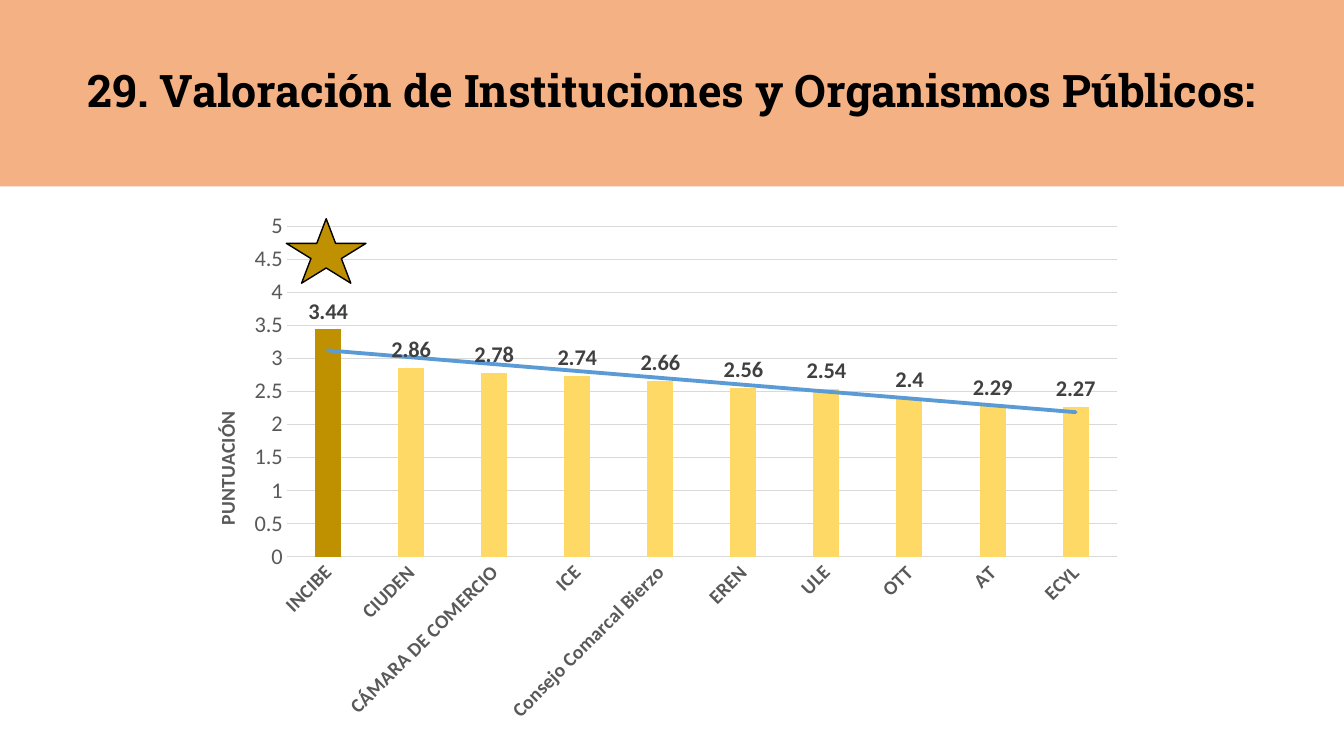
from pptx import Presentation
from pptx.chart.data import CategoryChartData
from pptx.dml.color import RGBColor
from pptx.enum.chart import XL_CHART_TYPE as ChartType, XL_LABEL_POSITION as LabelPos
from pptx.enum.chart import XL_TICK_MARK as TickMark
from pptx.enum.shapes import MSO_SHAPE as Preset
from pptx.enum.text import MSO_ANCHOR as Anchor, MSO_AUTO_SIZE as AutoSize, PP_ALIGN as Align
from pptx.oxml import parse_xml
from pptx.oxml.ns import nsdecls, qn
from pptx.util import Inches, Pt

ORANGE = RGBColor(0xF4, 0xB1, 0x83)
YELLOW = RGBColor(0xFF, 0xD9, 0x66)
GOLD = RGBColor(0xBF, 0x90, 0x00)
BLACK = RGBColor(0, 0, 0)
DARK_GREY = RGBColor(0x40, 0x40, 0x40)
GREY = RGBColor(0x59, 0x59, 0x59)
LIGHT_GREY = RGBColor(0xD9, 0xD9, 0xD9)

SCORES = {
    "INCIBE": 3.44, "CIUDEN": 2.86, "CÁMARA DE COMERCIO": 2.78, "ICE": 2.74,
    "Consejo Comarcal Bierzo": 2.66, "EREN": 2.56, "ULE": 2.54,
    "OTT": 2.4, "AT": 2.29, "ECYL": 2.27,
}


def style_font(font, size, color, bold=False, name="Calibri"):
    font.name, font.size, font.bold = name, Pt(size), bold
    font.color.rgb = color


def place(parent, index, target, **fractions):
    """Give a chart part a manual layout in fractions of the chart."""
    old = parent.find(qn("c:layout"))
    if old is not None:
        parent.remove(old)
    inner = f'<c:layoutTarget val="{target}"/>' if target else ""
    modes = '<c:xMode val="edge"/><c:yMode val="edge"/>'
    sizes = "".join(f'<c:{key} val="{value}"/>' for key, value in fractions.items())
    parent.insert(index, parse_xml(
        f'<c:layout {nsdecls("c")}><c:manualLayout>{inner}{modes}{sizes}'
        "</c:manualLayout></c:layout>"))


prs = Presentation()
prs.slide_width, prs.slide_height = Inches(13.33), Inches(7.5)
slide = prs.slides.add_slide(prs.slide_layouts[5])

# Title band
title = slide.shapes.title
title.left, title.top, title.width, title.height = 0, 0, Inches(13.33), Inches(1.85)
title.fill.solid()
title.fill.fore_color.rgb = ORANGE
frame = title.text_frame
frame.auto_size = AutoSize.NONE
frame.word_wrap = True
frame.vertical_anchor = Anchor.MIDDLE
heading = frame.paragraphs[0]
heading.alignment = Align.CENTER
heading.line_spacing = 0.9
run = heading.add_run()
run.text = "29. Valoración de Instituciones y Organismos Públicos:"
style_font(run.font, 32, BLACK, True, "Roboto Slab")

# Score chart
data = CategoryChartData()
data.categories = list(SCORES)
data.add_series("Series 1", list(SCORES.values()))
chart = slide.shapes.add_chart(
    ChartType.COLUMN_CLUSTERED, Inches(1.8), Inches(1.98), Inches(9.47), Inches(5.29), data).chart
chart.has_legend = False
chart.has_title = False
style_font(chart.font, 10, BLACK)
plot = chart.plots[0]
plot.gap_width, plot.overlap, plot.vary_by_categories = 219, -27, False

# Columns, with the winner in gold
scores = plot.series[0]
for part, color in ((scores, YELLOW), (scores.points[0], GOLD)):
    part.format.fill.solid()
    part.format.fill.fore_color.rgb = color
labels = scores.data_labels
labels.show_value = True
labels.position = LabelPos.OUTSIDE_END
style_font(labels.font, 16, DARK_GREY, True)

# Linear trend line
scores._element.find(qn("c:cat")).addprevious(parse_xml(
    f'<c:trendline {nsdecls("c", "a")}><c:spPr><a:ln w="{Pt(2.75)}" cap="rnd"><a:solidFill>'
    '<a:srgbClr val="5B9BD5"/></a:solidFill></a:ln></c:spPr><c:trendlineType val="linear"/>'
    '<c:dispRSqr val="0"/><c:dispEq val="0"/></c:trendline>'))

# Axes
institutions, points = chart.category_axis, chart.value_axis
for axis, size, bold in ((institutions, 14, True), (points, 16, False)):
    axis.major_tick_mark = axis.minor_tick_mark = TickMark.NONE
    style_font(axis.tick_labels.font, size, GREY, bold)
institutions._element.find(qn("c:txPr")).find(qn("a:bodyPr")).set("rot", "-2700000")
points.minimum_scale, points.maximum_scale, points.major_unit = 0, 5, 0.5
points.format.line.fill.background()
for line in (institutions.format.line, points.major_gridlines.format.line):
    line.color.rgb = LIGHT_GREY
    line.width = Pt(0.75)

# Value axis title
caption = points.axis_title
run = caption.text_frame.paragraphs[0].add_run()
run.text = "PUNTUACIÓN"
style_font(run.font, 14, GREY, True)
body = caption.text_frame._txBody.find(qn("a:bodyPr"))
body.set("rot", "-5400000")
body.set("vert", "horz")
place(caption._element, 1, "", x=0.03, y=0.39)
place(chart._chartSpace.chart.plotArea, 0, "inner", x=0.11, y=0.05, w=0.87, h=0.62)

# Star above the winner
star = slide.shapes.add_shape(
    Preset.STAR_5_POINT, Inches(2.84), Inches(2.17), Inches(0.79), Inches(0.64))
star.shadow.inherit = False
star.fill.solid()
star.fill.fore_color.rgb = GOLD
star.line.color.rgb = BLACK
star.line.width = Pt(1)

prs.save("out.pptx")
